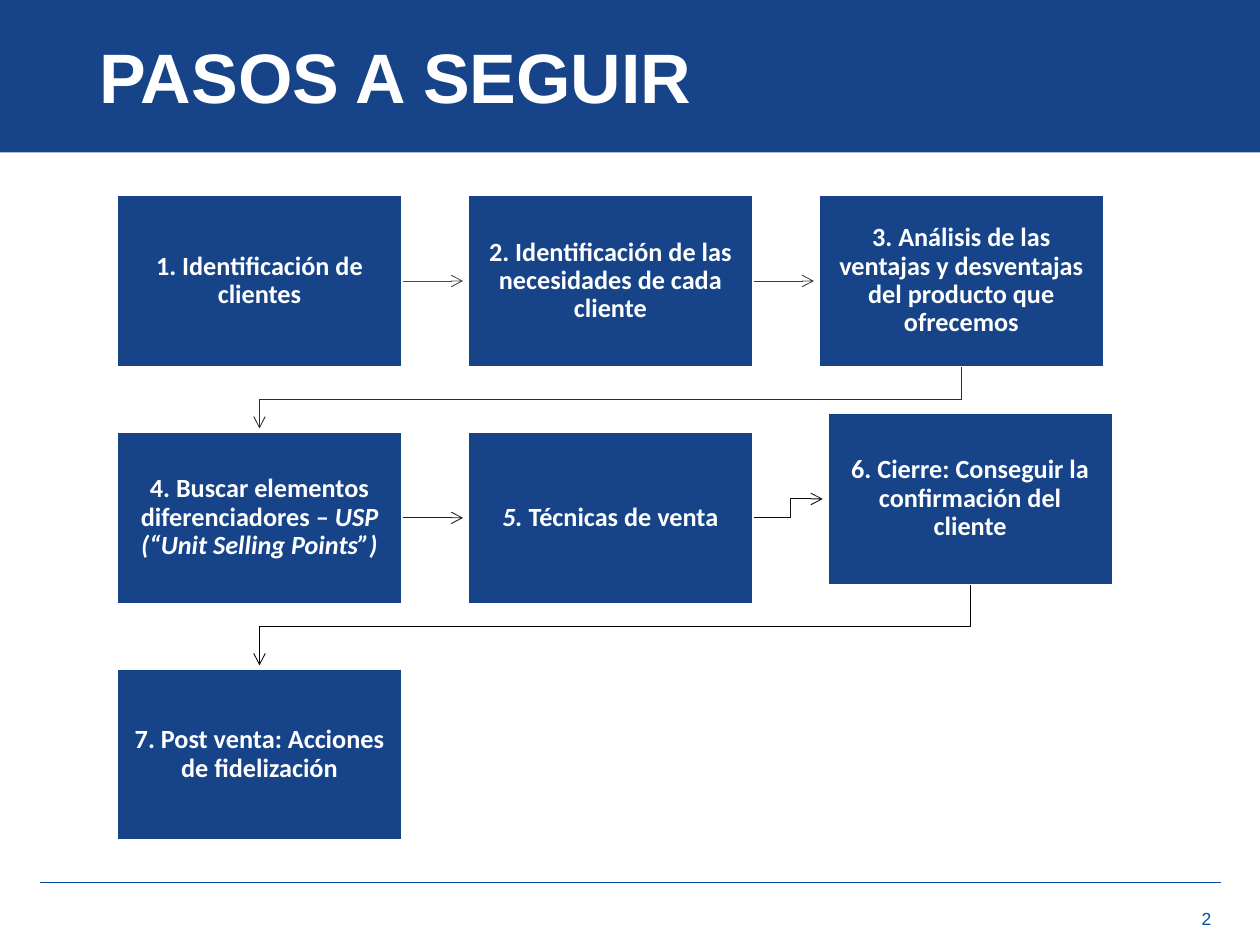
from lxml import etree
from pptx import Presentation
from pptx.dml.color import RGBColor
from pptx.enum import shapes, text
from pptx.oxml import ns
from pptx.util import Inches, Pt

BLUE = RGBColor(0x17, 0x44, 0x89)
RULE_BLUE = RGBColor(0x03, 0x4E, 0xA2)
WHITE = RGBColor(0xFF, 0xFF, 0xFF)

# Grid of steps
LEFT, TOP = 0.93, 1.55
STEP_WIDTH, STEP_HEIGHT = 2.26, 1.36
COLUMN_PITCH, ROW_PITCH = 2.785, 1.88
COLUMNS = 3
CLOSING_STEP, CLOSING_SHIFT = 5, (0.07, -0.15)  # step 6 sits off the grid

# Each step is a list of (text, italic) runs
STEPS = [
    [("1. Identificación de clientes", False)],
    [("2. Identificación de las necesidades de cada cliente", False)],
    [("3. Análisis de las ventajas y desventajas del producto que ofrecemos", False)],
    [("4. Buscar elementos diferenciadores – ", False),
     ("USP (“Unit Selling Points”)", True)],
    [("5. ", True), ("Técnicas de venta", False)],
    [("6. Cierre: Conseguir la confirmación del cliente", False)],
    [("7. Post venta: Acciones de fidelización", False)],
]
# Arrow greys darken from the first link to the last
ARROW_COLORS = [RGBColor.from_string(code) for code in
                ("484A4B", "3A3C3B", "2C2D2C", "1D1E1D", "0F0F0F", "000000")]


def step_position(index):
    row, column = divmod(index, COLUMNS)
    shift_x, shift_y = CLOSING_SHIFT if index == CLOSING_STEP else (0, 0)
    return LEFT + column * COLUMN_PITCH + shift_x, TOP + row * ROW_PITCH + shift_y


def set_font(paragraph, name, size, color, bold=False):
    font = paragraph.font
    font.name, font.size, font.bold = name, Pt(size), bold
    font.color.rgb = color


def add_box(slide, left, top, width, height):
    box = slide.shapes.add_shape(shapes.MSO_SHAPE.RECTANGLE, Inches(left),
                                 Inches(top), Inches(width), Inches(height))
    box.shadow.inherit = False
    box.fill.solid()
    box.fill.fore_color.rgb = BLUE
    box.line.fill.background()
    return box


def add_line(slide, start, end, color):
    line = slide.shapes.add_connector(shapes.MSO_CONNECTOR.STRAIGHT,
                                      *map(Inches, start + end))
    line.line.color.rgb = color
    line.line.width = Pt(0.5)
    etree.SubElement(line.element.spPr, ns.qn("a:effectLst"))
    return line


def add_bent_line(slide, points, color):
    start, *others = [(Inches(x), Inches(y)) for x, y in points]
    builder = slide.shapes.build_freeform(*start)
    builder.add_line_segments(others, close=False)
    line = builder.convert_to_shape()
    line.shadow.inherit = False
    line.fill.background()
    line.line.color.rgb = color
    line.line.width = Pt(0.5)
    return line


def add_arrowhead(line):
    etree.SubElement(line.line._get_or_add_ln(), ns.qn("a:tailEnd"), type="arrow")


def add_title(slide):
    band = add_box(slide, 0, 0, 10, 1.21)
    title = slide.shapes.title
    title.element.addprevious(band.element)  # band goes behind the title
    title.left, title.top = Inches(0.69), Inches(0)
    title.width, title.height = Inches(8.62), Inches(1.2)
    title.text_frame.text = "PASOS A SEGUIR"
    title.text_frame.vertical_anchor = text.MSO_ANCHOR.MIDDLE
    paragraph = title.text_frame.paragraphs[0]
    paragraph.alignment = text.PP_ALIGN.LEFT
    set_font(paragraph, "Arial", 40, WHITE, bold=True)


def add_footer(slide):
    add_line(slide, (0.32, 7), (9.69, 7), RULE_BLUE)
    number = slide.shapes.add_textbox(Inches(9.31), Inches(7.16),
                                      Inches(0.53), Inches(0.26))
    number.text_frame.word_wrap = True
    number.text_frame.text = "2"
    paragraph = number.text_frame.paragraphs[0]
    paragraph.alignment = text.PP_ALIGN.CENTER
    set_font(paragraph, "Arial", 10, RULE_BLUE)


def add_step(slide, index, runs):
    box = add_box(slide, *step_position(index), STEP_WIDTH, STEP_HEIGHT)
    box.line.color.rgb = WHITE
    box.line.width = Pt(1)
    frame = box.text_frame
    frame.word_wrap = True
    frame.vertical_anchor = text.MSO_ANCHOR.MIDDLE
    frame.margin_left = frame.margin_right = Inches(0.11)
    frame.margin_top = frame.margin_bottom = Inches(0.12)
    paragraph = frame.paragraphs[0]
    paragraph.alignment = text.PP_ALIGN.CENTER
    paragraph.line_spacing = 0.9
    set_font(paragraph, "Calibri", 15, WHITE, bold=True)
    for words, italic in runs:
        run = paragraph.add_run()
        run.text = words
        run.font.italic = italic


def add_link(slide, index, color):
    """Draw the arrow from one step to the next."""
    left, top = step_position(index)
    next_left, next_top = step_position(index + 1)
    if (index + 1) % COLUMNS == 0:  # down to the start of the next row
        start = (left + STEP_WIDTH / 2, top + STEP_HEIGHT)
        end = (next_left + STEP_WIDTH / 2, next_top - 0.03)
        middle = (start[1] + next_top) / 2
        bends = [(start[0], middle), (end[0], middle)]
    else:
        start = (left + STEP_WIDTH + 0.01, top + STEP_HEIGHT / 2)
        end = (next_left - 0.04, next_top + STEP_HEIGHT / 2)
        middle = (start[0] + next_left) / 2
        bends = [(middle, start[1]), (middle, end[1])]
    if start[1] == end[1]:
        line = add_line(slide, start, end, color)
    else:
        line = add_bent_line(slide, [start, *bends, end], color)
    add_arrowhead(line)


def main():
    presentation = Presentation()
    presentation.slide_width, presentation.slide_height = Inches(10), Inches(7.5)
    slide = presentation.slides.add_slide(presentation.slide_layouts[5])
    add_title(slide)
    add_footer(slide)
    # Process steps and the arrows between them
    for index, color in enumerate(ARROW_COLORS):
        add_link(slide, index, color)
    for index, runs in enumerate(STEPS):
        add_step(slide, index, runs)
    presentation.save("out.pptx")


if __name__ == "__main__":
    main()
